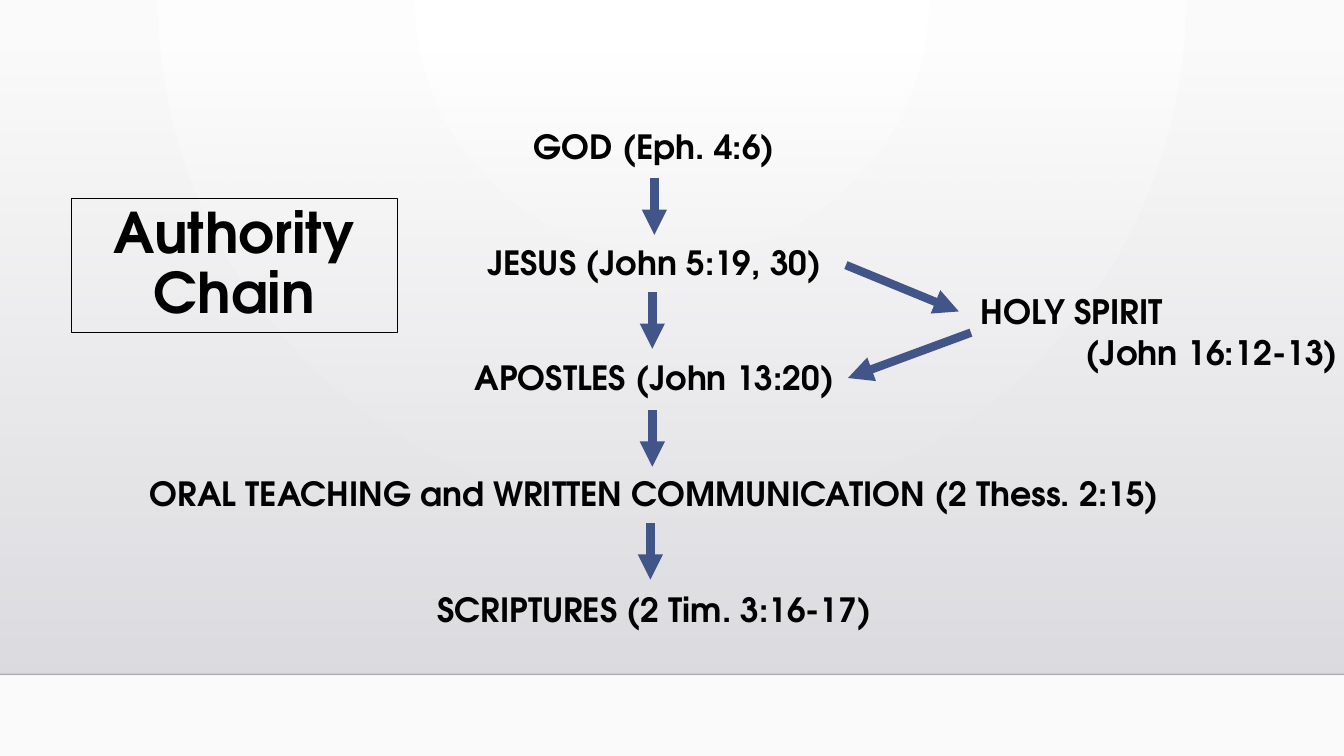
from lxml import etree
from pptx import Presentation
from pptx import util as u
from pptx.dml.color import RGBColor
from pptx.enum import shapes, text
from pptx.oxml import parse_xml
from pptx.oxml.ns import nsdecls, qn

FONT = "TeX Gyre Adventor"
ARROW = "415588"


def rgb(value):
    return RGBColor.from_string(value)


def gradient(stops, shade):
    """Gradient fill element from (position, colour, opacity) stops, in percent."""
    gs = "".join(
        f'<a:gs pos="{pos * 1000}"><a:srgbClr val="{color}">'
        f'<a:alpha val="{alpha * 1000}"/></a:srgbClr></a:gs>'
        for pos, color, alpha in stops)
    return parse_xml(f'<a:gradFill {nsdecls("a")} rotWithShape="1">'
                     f"<a:gsLst>{gs}</a:gsLst>{shade}</a:gradFill>")


def set_gradient(fill, parent, stops, shade):
    fill.gradient()
    parent.replace(parent.find(qn("a:gradFill")), gradient(stops, shade))


def add_line(s, start, end, color, width, arrow=False, alpha=None):
    points = [u.Inches(v) for v in (*start, *end)]
    sp = s.shapes.add_connector(shapes.MSO_CONNECTOR.STRAIGHT, *points)
    sp.line.color.rgb = rgb(color)
    sp.line.width = u.Pt(width)
    ln = sp.line._get_or_add_ln()
    if alpha is not None:
        clr = ln.find(".//" + qn("a:srgbClr"))
        etree.SubElement(clr, qn("a:alpha"), val=str(alpha * 1000))
    if arrow:
        etree.SubElement(ln, qn("a:tailEnd"), type="triangle")
    etree.SubElement(sp._element.spPr, qn("a:effectLst"))


def add_text(s, box, lines, size, align=text.PP_ALIGN.LEFT,
             anchor=text.MSO_ANCHOR.TOP, spacing=1.0, gap=0, indent=0, right=0.1):
    """Text box with one paragraph per line; gap and indent apply after the first."""
    sp = s.shapes.add_textbox(*[u.Inches(v) for v in box])
    tf = sp.text_frame
    tf.word_wrap = True
    tf.vertical_anchor = anchor
    tf.margin_right = u.Inches(right)
    for i, line in enumerate(lines):
        p = tf.paragraphs[0] if i == 0 else tf.add_paragraph()
        p.alignment = align
        p.line_spacing = spacing
        if i:
            p.space_before = u.Pt(gap)
            p._p.get_or_add_pPr().set("marL", str(u.Inches(indent)))
        r = p.add_run()
        r.text = line
        r.font.name = FONT
        r.font.size = u.Pt(size)
        r.font.bold = True
        r.font.color.rgb = rgb("000000")
    return sp


def add_backdrop(s):
    fill = s.background.fill
    fill.gradient()
    bg = s._element.find(".//" + qn("p:bgPr"))
    set_gradient(fill, bg, [(0, "FFFFFF", 100), (100, "FAFAFA", 100)],
                 '<a:path path="circle"><a:fillToRect l="43000" t="0" '
                 'r="43000" b="100000"/></a:path>')
    panel = s.shapes.add_shape(shapes.MSO_SHAPE.RECTANGLE, 0, u.Inches(0.51),
                               u.Inches(13.33), u.Inches(6.18))
    panel.shadow.inherit = False
    panel.line.fill.background()
    set_gradient(panel.fill, panel._element.spPr,
                 [(0, "DCDCE0", 0), (100, "DEDEE2", 100)],
                 '<a:lin ang="5400000" scaled="0"/>')
    add_line(s, (0, 6.69), (13.33, 6.69), "000001", 1, alpha=20)


def main():
    prs = Presentation()
    prs.slide_width, prs.slide_height = u.Inches(13.33), u.Inches(7.5)
    s = prs.slides.add_slide(prs.slide_layouts[6])
    add_backdrop(s)

    # Title
    title = add_text(s, (0.71, 1.97, 3.23, 1.33), ["Authority Chain"], 40,
                     align=text.PP_ALIGN.CENTER,
                     anchor=text.MSO_ANCHOR.MIDDLE, spacing=0.9)
    title.line.color.rgb = rgb("000000")
    title.line.width = u.Pt(0.75)

    # Chain from top to bottom
    chain = ["GOD (Eph. 4:6)",
             "JESUS (John 5:19, 30)",
             "APOSTLES (John 13:20)",
             "ORAL TEACHING and WRITTEN COMMUNICATION (2 Thess. 2:15)",
             "SCRIPTURES (2 Tim. 3:16-17)"]
    add_text(s, (1.24, 1.16, 10.5, 5.5), chain, 23.8,
             align=text.PP_ALIGN.CENTER, spacing=1.1, gap=51.4)

    # Side branch
    add_text(s, (9.63, 2.84, 3.7, 0.91), ["HOLY SPIRIT", "(John 16:12-13)"], 24,
             indent=1.04, right=0)

    # Arrows down the chain, then out to the branch and back
    for x, y in [(6.49, 1.77), (6.47, 2.9), (6.47, 4.07), (6.45, 5.19)]:
        add_line(s, (x, y), (x, y + 0.56), ARROW, 6, arrow=True)
    add_line(s, (8.39, 2.63), (9.51, 3.09), ARROW, 6, arrow=True)
    add_line(s, (9.63, 3.3), (8.41, 3.75), ARROW, 6, arrow=True)

    prs.save("out.pptx")


if __name__ == "__main__":
    main()
